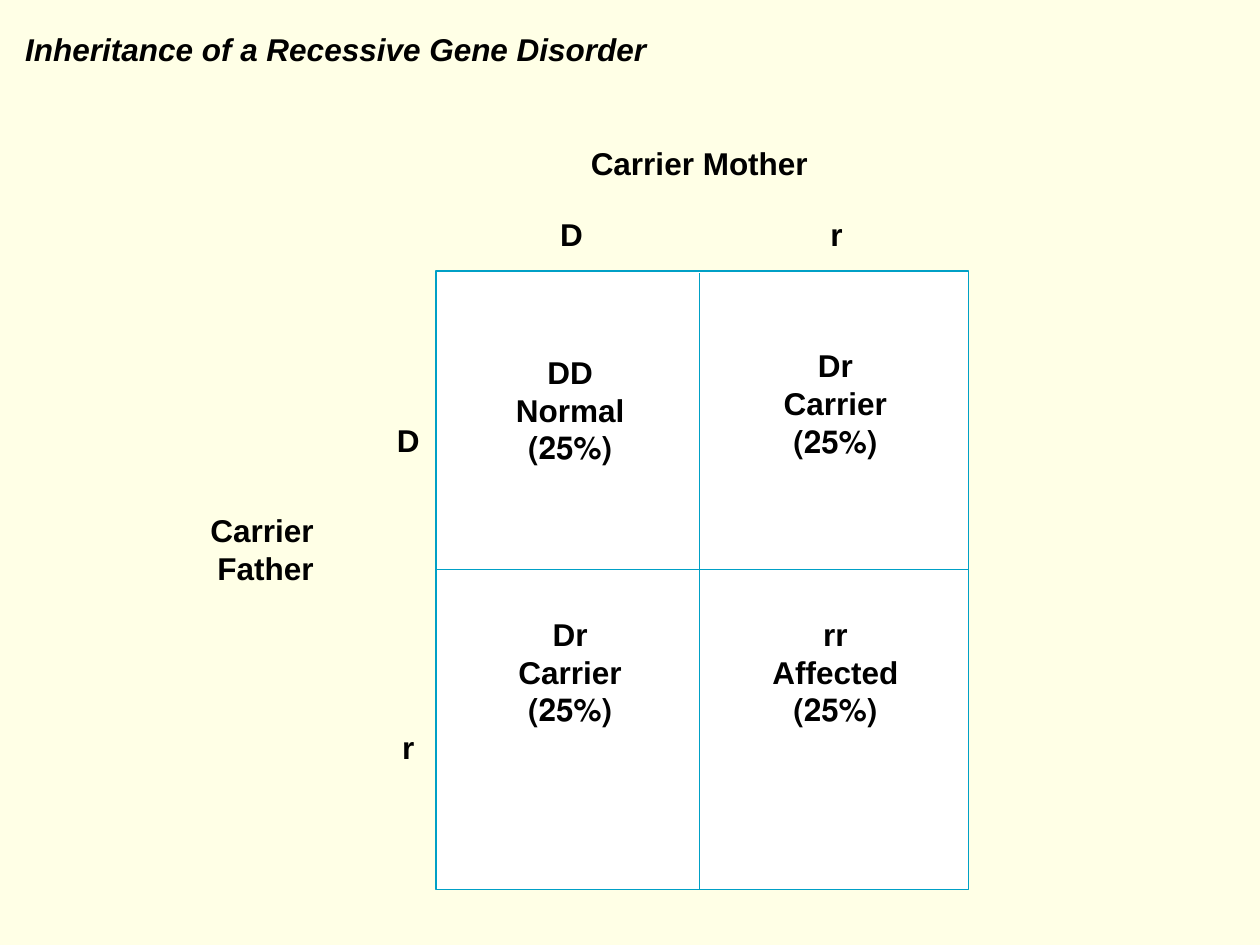
from lxml import etree
from pptx import Presentation, util as u
from pptx.dml.color import RGBColor
from pptx.enum import shapes, text
from pptx.oxml.ns import qn

CREAM = RGBColor(0xFF, 0xFF, 0xE6)
WHITE = RGBColor(0xFF, 0xFF, 0xFF)
BLACK = RGBColor(0x00, 0x00, 0x00)
TEAL = RGBColor(0x00, 0xA0, 0xC6)
LINE_HEIGHT = 0.4  # box height per line of text, in inches
CENTER, LEFT, RIGHT = text.PP_ALIGN.CENTER, text.PP_ALIGN.LEFT, text.PP_ALIGN.RIGHT


def write(sp, lines, align, italic=False):
    """Fill a shape with bold 18 pt right-to-left lines, without insets."""
    tf = sp.text_frame
    tf.word_wrap = True
    tf.auto_size = text.MSO_AUTO_SIZE.NONE
    tf.vertical_anchor = text.MSO_ANCHOR.TOP
    tf.margin_left = tf.margin_right = tf.margin_top = tf.margin_bottom = 0
    tf.text = "\n".join(lines)
    for p in tf.paragraphs:
        p.alignment, p.line_spacing = align, u.Pt(21.6)
        p._p.get_or_add_pPr().set("rtl", "1")
        f = p.font
        f.name, f.size, f.bold, f.italic = "Arial", u.Pt(18), True, italic
        f.color.rgb = BLACK


def label(s, lines, center, top, width, align=CENTER):
    """Add a text box centred on a horizontal position."""
    sp = s.shapes.add_textbox(u.Inches(center - width / 2), u.Inches(top),
                              u.Inches(width), u.Inches(LINE_HEIGHT * len(lines)))
    write(sp, lines, align)


def panel(s, left, top, width, height, color):
    sp = s.shapes.add_shape(shapes.MSO_SHAPE.RECTANGLE, u.Inches(left), u.Inches(top),
                            u.Inches(width), u.Inches(height))
    sp.shadow.inherit = False
    sp.fill.solid()
    sp.fill.fore_color.rgb = color
    sp.line.fill.background()
    return sp


def rule(s, x1, y1, x2, y2):
    c = s.shapes.add_connector(shapes.MSO_CONNECTOR.STRAIGHT,
                               *(u.Inches(v) for v in (x1, y1, x2, y2)))
    c.line.color.rgb, c.line.width = TEAL, u.Pt(0.75)
    etree.SubElement(c._element.spPr, qn("a:effectLst"))


def title(s, left, top, width):
    sp = s.shapes.title
    sp.left, sp.top = u.Inches(left), u.Inches(top)
    sp.width, sp.height = u.Inches(width), u.Inches(LINE_HEIGHT)
    write(sp, ["Inheritance of a Recessive Gene Disorder"], LEFT, italic=True)


def punnett_square(s, left, top, width, height):
    """Draw the square, its parents' genes and the four outcomes."""
    right, bottom = left + width, top + height
    mid_x, mid_y = left + 2.09, top + 2.37
    col_centers = (left + mid_x) / 2 + 0.02, (mid_x + right) / 2 + 0.01

    # Frame and dividers
    sp = panel(s, left, top, width, height, WHITE)
    sp.line.color.rgb, sp.line.width = TEAL, u.Pt(0.75)
    rule(s, mid_x, top + 0.02, mid_x, bottom)
    rule(s, left, mid_y, right, mid_y)

    # Parents
    label(s, ["Carrier Mother"], mid_x, top - 1.01, 2.3)
    label(s, ["Carrier", "Father"], left - 1.39, mid_y - 0.46, 0.84, RIGHT)

    # Genes along the top and the side
    for gene, x, y, width_in in zip("Dr", col_centers, (top + 1.19, mid_y + 1.26), (0.24, 0.13)):
        label(s, [gene], x + 0.01, top - 0.44, width_in)
        label(s, [gene], left - 0.22, y, width_in)

    # Outcomes: genes, effect, column, top and width
    outcomes = [
        ("DD", "Normal", 0, top + 0.65, 1.15),
        ("Dr", "Carrier", 1, top + 0.6, 1.1),
        ("Dr", "Carrier", 0, mid_y + 0.36, 1.1),
        ("rr", "Affected", 1, mid_y + 0.36, 1.34),
    ]
    for genes, effect, col, y, width_in in outcomes:
        label(s, [genes, effect, "(25%)"], col_centers[col], y, width_in)


def main():
    prs = Presentation()
    prs.slide_width, prs.slide_height = u.Inches(10), u.Inches(7.5)
    s = prs.slides.add_slide(prs.slide_layouts[5])
    # Cream backdrop, placed behind the title
    backdrop = panel(s, 0, 0, 10, 7.5, CREAM)
    s.shapes.title._element.addprevious(backdrop._element)
    title(s, 0.2, 0.24, 6.58)
    punnett_square(s, 3.46, 2.15, 4.23, 4.91)
    prs.save("out.pptx")


if __name__ == "__main__":
    main()
